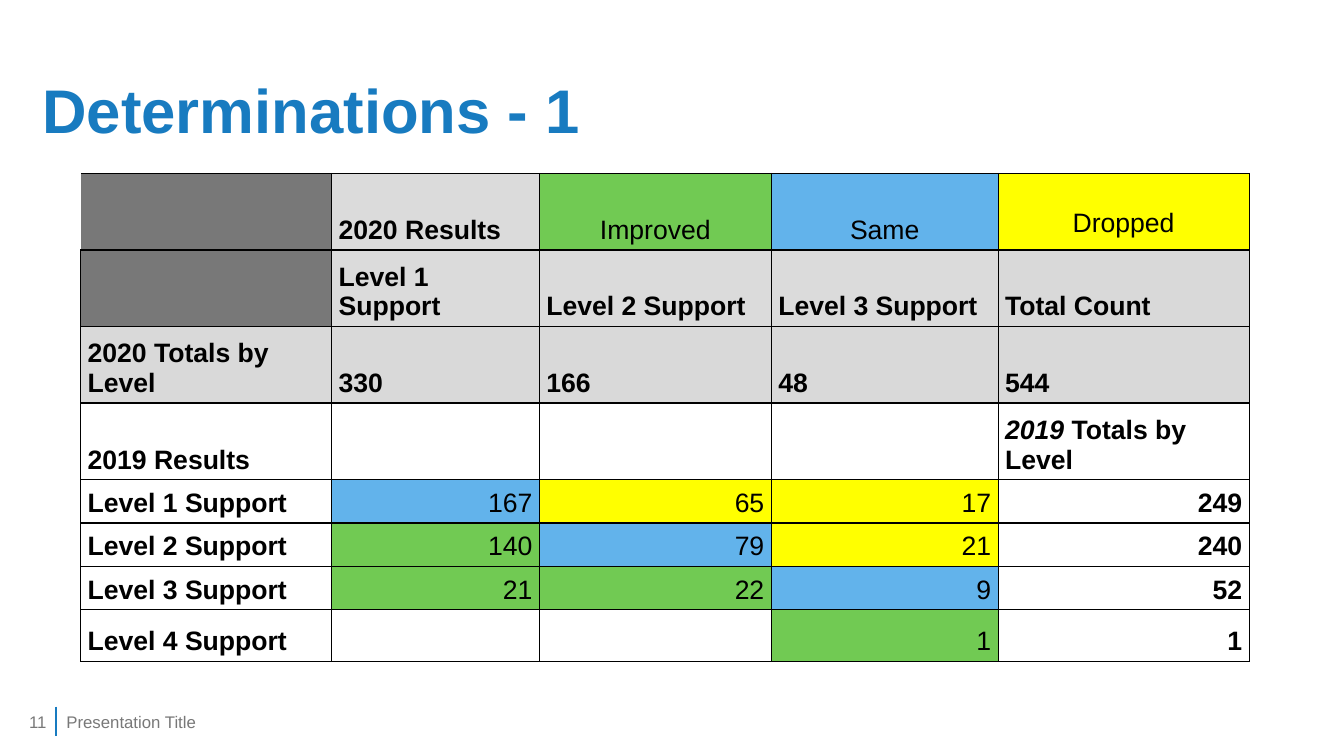
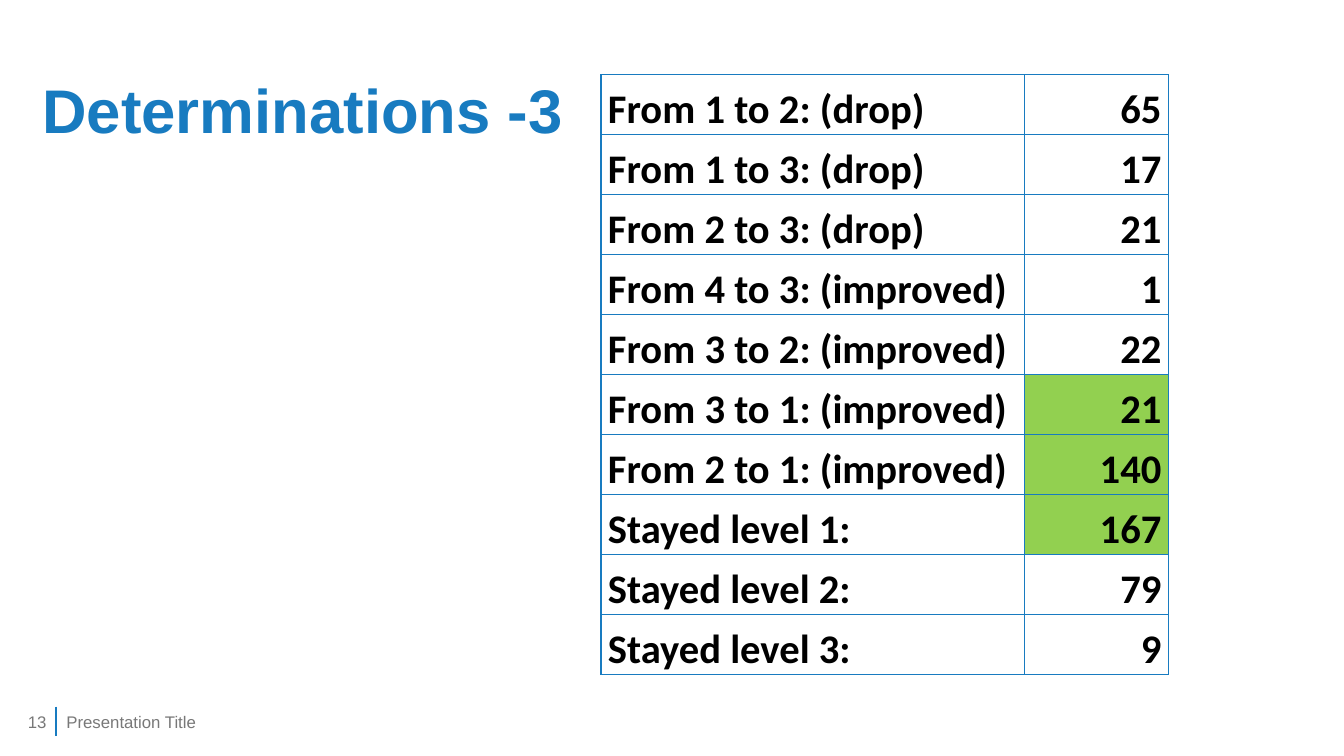
from lxml.etree import SubElement
from pptx import Presentation
from pptx.dml.color import RGBColor
from pptx.enum.shapes import MSO_CONNECTOR as Link
from pptx.enum.text import MSO_ANCHOR as Anchor, PP_ALIGN as Align
from pptx.oxml.ns import qn
from pptx.util import Inches, Pt

rgb = RGBColor.from_string
BLUE, GRAY, BLACK = "187BC0", "787878", "000000"
FILLS = {
    "dark": GRAY, "light": "DBDBDB", "total": "D9D9D9", "plain": "FFFFFF",
    "up": "71CA53", "same": "62B3EB", "down": "FFFF00", "mark": "92D050",
}
MOVES = ("up", "same", "down")


def write(frame, text, size=12, color=GRAY, font="Arial", bold=False,
          italic=False, align=Align.LEFT, anchor=Anchor.MIDDLE):
    """Append a formatted run to the first paragraph of a text frame or cell."""
    frame.vertical_anchor = anchor
    frame.word_wrap = True
    par = getattr(frame, "text_frame", frame).paragraphs[0]
    par.alignment = align
    run = par.add_run()
    run.text = text
    run.font.size, run.font.name = Pt(size), font
    run.font.bold, run.font.italic = bold, italic
    run.font.color.rgb = rgb(color)


def grid(slide, left, top, cols, heights, rows, fills, size, font, line, pad, heavy=None):
    """Draw a ruled table; heavy is the row with a thicker lower rule."""
    table = slide.shapes.add_table(
        len(rows), len(cols), Inches(left), Inches(top),
        Inches(sum(cols)), Inches(sum(heights))).table
    table.first_row = table.horz_banding = False
    for col, width in zip(table.columns, cols):
        col.width = Inches(width)
    for r, (row, height) in enumerate(zip(rows, heights)):
        table.rows[r].height = Inches(height)
        for c, (text, kind) in enumerate(zip(row, fills[r])):
            cell = table.cell(r, c)
            cell.margin_left = cell.margin_right = Inches(0.07)
            cell.margin_top = cell.margin_bottom = Inches(pad)
            for side in ("L", "R", "T", "B"):
                if side == "L" and c == 0 and kind == "dark" and r == 0:
                    continue
                thick = heavy is not None and (r, side) in ((heavy, "B"), (heavy + 1, "T"))
                edge = SubElement(cell._tc.get_or_add_tcPr(), qn("a:ln" + side),
                                  w=str(Pt(1.5 if thick else 1)))
                paint = SubElement(edge, qn("a:solidFill"))
                SubElement(paint, qn("a:srgbClr"), val=line)
            cell.fill.solid()
            cell.fill.fore_color.rgb = rgb(FILLS[kind])
            if not text:
                continue
            align = Align.LEFT
            if text.isdigit() and kind != "total":
                align = Align.RIGHT
            elif kind in MOVES:
                align = Align.CENTER
            head, star, tail = text.rpartition("*")
            for part, slant in ((head, True), (tail, False)):
                if part:
                    write(cell, part, size=size, color=BLACK, font=font,
                          bold=kind not in MOVES, italic=slant,
                          align=align, anchor=Anchor.BOTTOM)
    return table


deck = Presentation()
deck.slide_width, deck.slide_height = Inches(13.33), Inches(7.5)

# Title, rule and footer of every slide
slides = []
for title, number in (("Determinations - 1", "11"), ("Determinations -3", "13")):
    slide = deck.slides.add_slide(deck.slide_layouts[5])
    slides.append(slide)
    head = slide.shapes.title
    head.left, head.top = Inches(0.32), Inches(0.4)
    head.width, head.height = Inches(12.69), Inches(1.45)
    write(head.text_frame, title, size=44, color=BLUE, bold=True)
    head.text_frame.paragraphs[0].line_spacing = 0.9
    rule = slide.shapes.add_connector(
        Link.STRAIGHT, Inches(0.56), Inches(7.01), Inches(0.56), Inches(7.3))
    rule.line.color.rgb = rgb(BLUE)
    rule.line.width = Pt(1.5)
    SubElement(rule._element.spPr, qn("a:effectLst"))
    for text, left, width, align in (
            ("Presentation Title", 0.56, 6.52, Align.LEFT),
            (number, 0, 0.56, Align.RIGHT)):
        box = slide.shapes.add_textbox(Inches(left), Inches(6.96), Inches(width), Inches(0.4))
        write(box.text_frame, text, align=align)

# Results of both years; text before a star is italic
levels = [f"Level {n} Support" for n in range(1, 5)]
results = [
    ["", "2020 Results", "Improved", "Same", "Dropped"],
    ["", *levels[:3], "Total Count"],
    ["2020 Totals by Level", "330", "166", "48", "544"],
    ["2019 Results", "", "", "", "2019* Totals by Level"],
    [levels[0], "167", "65", "17", "249"],
    [levels[1], "140", "79", "21", "240"],
    [levels[2], "21", "22", "9", "52"],
    [levels[3], "", "", "1", "1"],
]
shades = [
    ["dark", "light", "up", "same", "down"],
    ["dark", "light", "light", "light", "total"],
    ["total"] * 5,
    ["plain"] * 5,
    ["plain", "same", "down", "down", "plain"],
    ["plain", "up", "same", "down", "plain"],
    ["plain", "up", "up", "same", "plain"],
    ["plain", "plain", "plain", "up", "plain"],
]
table = grid(slides[0], 0.8, 1.72, [2.49, 2.06, 2.3, 2.25, 2.49],
             [0.76] * 4 + [0.43] * 3 + [0.51], results, shades,
             size=19, font="Arial", line=BLACK, pad=0.05, heavy=2)
table.cell(0, 4).margin_bottom = Inches(0.12)

# Moves between levels
moves = [
    ("From 1 to 2: (drop)", "65"),
    ("From 1 to 3: (drop)", "17"),
    ("From 2 to 3: (drop)", "21"),
    ("From 4 to 3: (improved)", "1"),
    ("From 3 to 2: (improved)", "22"),
    ("From 3 to 1: (improved)", "21"),
    ("From 2 to 1: (improved)", "140"),
    ("Stayed level 1:", "167"),
    ("Stayed level 2:", "79"),
    ("Stayed level 3:", "9"),
]
shades = [("plain", "mark" if 5 <= r <= 7 else "plain") for r in range(len(moves))]
grid(slides[1], 5.96, 0.74, [4.2, 1.43], [5.95 / len(moves)] * len(moves),
     moves, shades, size=29, font="Calibri", line=BLUE, pad=0)

deck.save("out.pptx")
